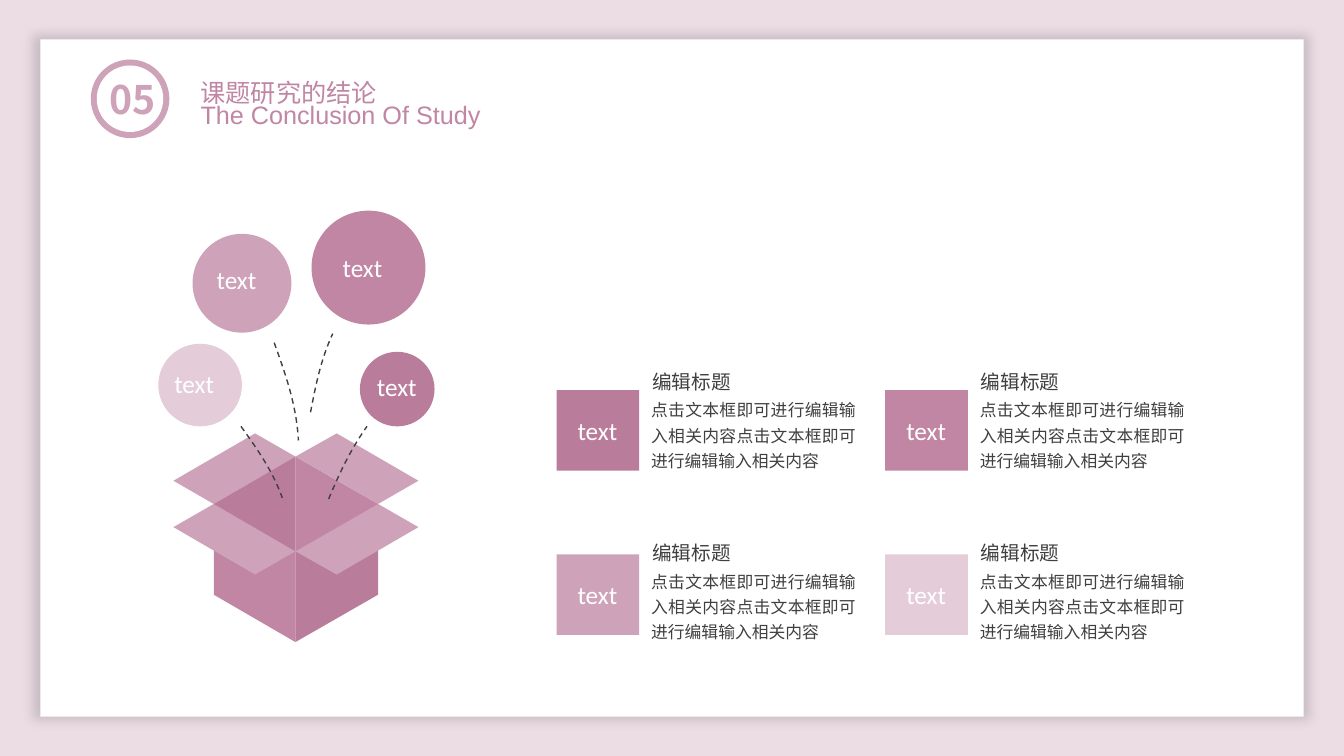
from lxml.etree import SubElement
from pptx import Presentation
from pptx.dml.color import RGBColor
from pptx.enum.dml import MSO_LINE
from pptx.enum.shapes import MSO_SHAPE
from pptx.enum.text import MSO_AUTO_SIZE, PP_ALIGN
from pptx.oxml.ns import qn
from pptx.util import Inches, Pt

# Content and palette
PLUM, ROSE, PINK, PALE = "BA7C9B", "C086A3", "CEA2B8", "E4CCD8"
WHITE, DARK, BACKGROUND = "FFFFFF", "404040", "ECDCE4"
CHINESE = "Noto Sans CJK SC"
NUMBER = "05"
TITLE = "课题研究的结论"
SUBTITLE = "The Conclusion Of Study"
LABEL = "text"
CARD_TITLE = "编辑标题"
CARD_BODY = "点击文本框即可进行编辑输入相关内容点击文本框即可进行编辑输入相关内容"
CARD_COLORS = [[PLUM, ROSE], [PINK, PALE]]

# Balloons: left, top, width, height, color, label left, label top
BALLOONS = [
    (1.91, 2.32, 0.98, 0.98, PINK, 2.05, 2.57),
    (1.57, 3.41, 0.83, 0.82, PALE, 1.63, 3.6),
    (3.57, 3.49, 0.74, 0.74, PLUM, 3.64, 3.63),
    (3.09, 2.09, 1.13, 1.13, ROSE, 3.3, 2.45),
]
# Strings: start, two control points, end
STRINGS = [
    [(2.72, 3.4), (2.83, 3.71), (2.94, 4.01), (2.96, 4.37)],
    [(2.39, 4.23), (2.54, 4.44), (2.7, 4.66), (2.8, 4.94)],
    [(3.08, 4.09), (3.13, 3.83), (3.18, 3.57), (3.3, 3.31)],
    [(3.26, 4.95), (3.36, 4.71), (3.47, 4.47), (3.64, 4.23)],
]

# Open carton, seen from a corner
BACK, FRONT, BOTTOM = (2.93, 4.53), (2.93, 5.47), (2.93, 6.37)
LEFT, RIGHT = (2.12, 5), (3.75, 5)
LEFT_BASE, RIGHT_BASE = (2.12, 5.9), (3.75, 5.9)
CARTON_FACES = [
    ([LEFT, LEFT_BASE, BOTTOM, FRONT], ROSE),
    ([RIGHT, RIGHT_BASE, BOTTOM, FRONT], PLUM),
    ([RIGHT, (4.15, 5.23), (3.34, 5.7), FRONT], PINK),
    ([LEFT, FRONT, (2.53, 5.7), (1.72, 5.23)], PINK),
    ([RIGHT, FRONT, BACK], ROSE),
    ([BACK, LEFT, (1.72, 4.77), (2.53, 4.3)], PINK),
    ([BACK, (3.34, 4.3), (4.15, 4.77), RIGHT], PINK),
    ([BACK, LEFT, FRONT], PLUM),
]


def paint(fill, color):
    fill.solid()
    fill.fore_color.rgb = RGBColor.from_string(color)


def add_filled(shapes, kind, left, top, width, height, color):
    shape = shapes.add_shape(kind, Inches(left), Inches(top), Inches(width), Inches(height))
    paint(shape.fill, color)
    shape.line.fill.background()
    shape.shadow.inherit = False
    return shape


def add_text(shapes, text, left, top, width, height, size, color, font=CHINESE,
             bold=False, align=None, spacing=None, wrap=True):
    box = shapes.add_textbox(Inches(left), Inches(top), Inches(width), Inches(height))
    frame = box.text_frame
    frame.text = text
    frame.word_wrap = wrap
    frame.auto_size = MSO_AUTO_SIZE.SHAPE_TO_FIT_TEXT
    para = frame.paragraphs[0]
    para.alignment = align
    para.line_spacing = spacing
    span = para.runs[0]
    span.font.size = Pt(size)
    span.font.bold = bold
    span.font.name = font
    span.font.color.rgb = RGBColor.from_string(color)
    SubElement(span.font._element, qn("a:ea"), typeface=font)


def add_label(shapes, left, top):
    add_text(shapes, LABEL, left, top, 0.71, 0.4, 18, WHITE, "Calibri")


def add_outline(shapes, points, closed):
    start, *others = [(Inches(x), Inches(y)) for x, y in points]
    builder = shapes.build_freeform(*start, scale=1.0)
    builder.add_line_segments(others, close=closed)
    shape = builder.convert_to_shape()
    shape.shadow.inherit = False
    return shape


def add_string(shapes, points):
    shape = add_outline(shapes, points, closed=False)
    shape.fill.background()
    paint(shape.line.fill, DARK)
    shape.line.width = Pt(1)
    shape.line.dash_style = MSO_LINE.DASH
    # Turn the three line points into one cubic curve
    segments = list(shape._element.iter(qn("a:lnTo")))
    curve = SubElement(segments[0].getparent(), qn("a:cubicBezTo"))
    for segment in segments:
        curve.append(segment[0])
        segment.getparent().remove(segment)


def add_glow(shape):
    effects = shape._element.spPr.find(qn("a:effectLst"))
    shadow = SubElement(effects, qn("a:outerShdw"), blurRad=str(Pt(8)), sx="101000",
                        sy="101000", algn="ctr", rotWithShape="0")
    color = SubElement(shadow, qn("a:srgbClr"), val="808080")
    SubElement(color, qn("a:alpha"), val="32000")


def main():
    deck = Presentation()
    deck.slide_width, deck.slide_height = Inches(13.33), Inches(7.5)
    page = deck.slides.add_slide(deck.slide_layouts[6])
    paint(page.background.fill, BACKGROUND)
    shapes = page.shapes

    # Panel and heading
    add_glow(add_filled(shapes, MSO_SHAPE.RECTANGLE, 0.4, 0.39, 12.53, 6.72, WHITE))
    ring = shapes.add_group_shape().shapes
    add_filled(ring, MSO_SHAPE.OVAL, 0.9, 0.59, 0.78, 0.78, PINK)
    add_filled(ring, MSO_SHAPE.OVAL, 0.96, 0.65, 0.66, 0.66, WHITE)
    add_text(shapes, NUMBER, 0.95, 0.7, 0.72, 0.57, 28, PINK, bold=True,
             align=PP_ALIGN.CENTER)
    add_text(shapes, TITLE, 1.89, 0.42, 1.97, 0.62, 18, ROSE, spacing=2.0, wrap=False)
    add_text(shapes, SUBTITLE, 1.89, 0.94, 5.49, 0.4, 18, ROSE, "Arial")

    # Carton, balloons and strings
    carton = shapes.add_group_shape().shapes
    for points, color in CARTON_FACES:
        face = add_outline(carton, points, closed=True)
        paint(face.fill, color)
        face.line.fill.background()
    for left, top, width, height, color, label_left, label_top in BALLOONS:
        add_filled(shapes, MSO_SHAPE.OVAL, left, top, width, height, color)
        add_label(shapes, label_left, label_top)
    for points in STRINGS:
        add_string(shapes, points)

    # Cards in a two by two grid
    for row, colors in enumerate(CARD_COLORS):
        tile_top = 3.87 + 1.63 * row
        text_top = 3.62 + 1.7 * row
        for column, color in enumerate(colors):
            left = 5.52 + 3.26 * column
            add_filled(shapes, MSO_SHAPE.RECTANGLE, left, tile_top, 0.82, 0.8, color)
            add_label(shapes, left + 0.11, tile_top + 0.2)
            add_text(shapes, CARD_BODY, left + 0.84, text_top + 0.25, 2.23, 0.82, 12, DARK,
                     align=PP_ALIGN.JUSTIFY, spacing=1.25)
            add_text(shapes, CARD_TITLE, left + 0.85, text_top, 1.42, 0.34, 14, DARK)

    deck.save("out.pptx")


if __name__ == "__main__":
    main()
